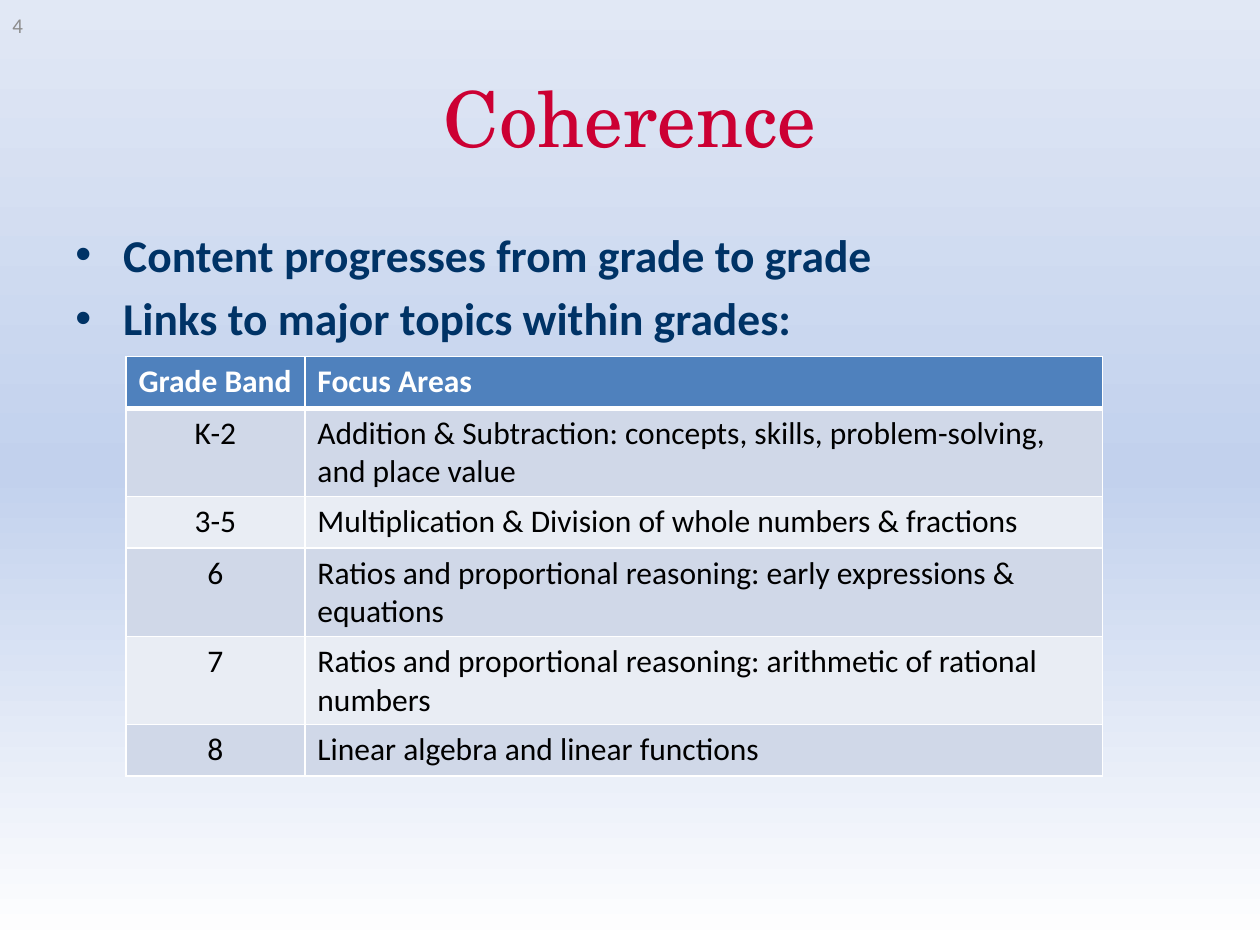
from copy import deepcopy

from lxml import etree
from pptx import Presentation
from pptx.dml.color import RGBColor
from pptx.enum.text import MSO_ANCHOR, PP_ALIGN
from pptx.oxml.ns import qn
from pptx.util import Inches, Pt

CENTER = PP_ALIGN.CENTER
LEFT = PP_ALIGN.LEFT
MIDDLE = MSO_ANCHOR.MIDDLE
TOP = MSO_ANCHOR.TOP

WHITE = RGBColor(0xFF, 0xFF, 0xFF)
BLACK = RGBColor(0x00, 0x00, 0x00)
CRIMSON = RGBColor(0xCC, 0x00, 0x33)
NAVY = RGBColor(0x00, 0x33, 0x66)
GRAY = RGBColor(0x8C, 0x8C, 0x8C)
HEADER_BLUE = RGBColor(0x4F, 0x81, 0xBD)
BAND_DARK = RGBColor(0xD0, 0xD8, 0xE8)
BAND_LIGHT = RGBColor(0xE9, 0xED, 0xF4)
SKY_STOPS = [
    (0, WHITE),
    (0.5, RGBColor(0xC2, 0xD1, 0xED)),
    (1, RGBColor(0xE1, 0xE8, 0xF5)),
]

BODY_FONT = "Calibri"
TITLE_FONT = "TeX Gyre Schola"

BULLETS = [
    "Content progresses from grade to grade",
    "Links to major topics within grades:",
]
FOCUS_ROWS = [
    ("Grade Band", "Focus Areas"),
    ("K-2", "Addition & Subtraction: concepts, skills, problem-solving, "
            "and place value"),
    ("3-5", "Multiplication & Division of whole numbers & fractions"),
    ("6", "Ratios and proportional reasoning: early expressions & equations"),
    ("7", "Ratios and proportional reasoning: arithmetic of rational numbers"),
    ("8", "Linear algebra and linear functions"),
]


def paint_background(slide):
    fill = slide.background.fill
    fill.gradient()
    fill.gradient_angle = 90
    stop_list = slide.element.find(".//" + qn("a:gsLst"))
    stop_list.append(deepcopy(stop_list[0]))
    for stop, (position, color) in zip(fill.gradient_stops, SKY_STOPS):
        stop.position = position
        stop.color.rgb = color


def style_runs(paragraph, size, color, font=BODY_FONT, bold=False):
    for run in paragraph.runs:
        run.font.size = Pt(size)
        run.font.color.rgb = color
        run.font.name = font
        run.font.bold = bold


def add_text(slide, left, top, width, height, lines, anchor=MIDDLE,
             align=LEFT, **style):
    box = slide.shapes.add_textbox(Inches(left), Inches(top),
                                   Inches(width), Inches(height))
    frame = box.text_frame
    frame.word_wrap = True
    frame.vertical_anchor = anchor
    frame.text = "\n".join(lines)
    for paragraph in frame.paragraphs:
        paragraph.alignment = align
        style_runs(paragraph, **style)
    return frame


def add_bullet(paragraph):
    properties = paragraph._p.get_or_add_pPr()
    indent = Inches(0.38)
    properties.set("marL", str(indent))
    properties.set("indent", str(-indent))
    etree.SubElement(properties, qn("a:buFont"), typeface="Arial")
    etree.SubElement(properties, qn("a:buChar"), char="•")


def add_border(cell, side, width):
    properties = cell._tc.get_or_add_tcPr()
    line = etree.SubElement(properties, qn("a:ln" + side), w=str(Pt(width)))
    fill = etree.SubElement(line, qn("a:solidFill"))
    etree.SubElement(fill, qn("a:srgbClr"), val=str(WHITE))


def format_cell(cell, text, row, column):
    is_header = row == 0
    cell.text = text
    paragraph = cell.text_frame.paragraphs[0]
    paragraph.alignment = CENTER if column == 0 and not is_header else LEFT
    style_runs(paragraph, 18, WHITE if is_header else BLACK, bold=is_header)

    # The rule under the header is thicker than the others
    add_border(cell, "L", 1)
    add_border(cell, "R", 1)
    add_border(cell, "T", 3 if row == 1 else 1)
    add_border(cell, "B", 3 if is_header else 1)

    cell.fill.solid()
    band = BAND_DARK if row % 2 else BAND_LIGHT
    cell.fill.fore_color.rgb = HEADER_BLUE if is_header else band


def add_focus_table(slide):
    height = Inches(3.32)
    shape = slide.shapes.add_table(len(FOCUS_ROWS), 2, Inches(1), Inches(2.83),
                                   Inches(7.75), height)
    table = shape.table
    for column, width in zip(table.columns, (1.42, 6.33)):
        column.width = Inches(width)
    for row, texts in enumerate(FOCUS_ROWS):
        table.rows[row].height = Inches(0.41)
        for column, text in enumerate(texts):
            format_cell(table.cell(row, column), text, row, column)
    shape.height = height


def main():
    presentation = Presentation()
    presentation.slide_width = Inches(10)
    presentation.slide_height = Inches(7.5)
    slide = presentation.slides.add_slide(presentation.slide_layouts[6])
    paint_background(slide)

    # Title
    add_text(slide, 0.5, 0.3, 9, 1.25, ["Coherence"], align=CENTER,
             size=44, color=CRIMSON, font=TITLE_FONT)

    # Key points
    points = add_text(slide, 0.5, 1.75, 9, 4.95, BULLETS, anchor=TOP,
                      size=26, color=NAVY, bold=True)
    for index, paragraph in enumerate(points.paragraphs):
        paragraph.space_before = Pt(5 if index else 0)
        add_bullet(paragraph)

    # Slide number
    add_text(slide, 0, 0, 2.33, 0.4, ["4"], size=12, color=GRAY)

    # Focus areas by grade band
    add_focus_table(slide)

    presentation.save("out.pptx")


if __name__ == "__main__":
    main()
